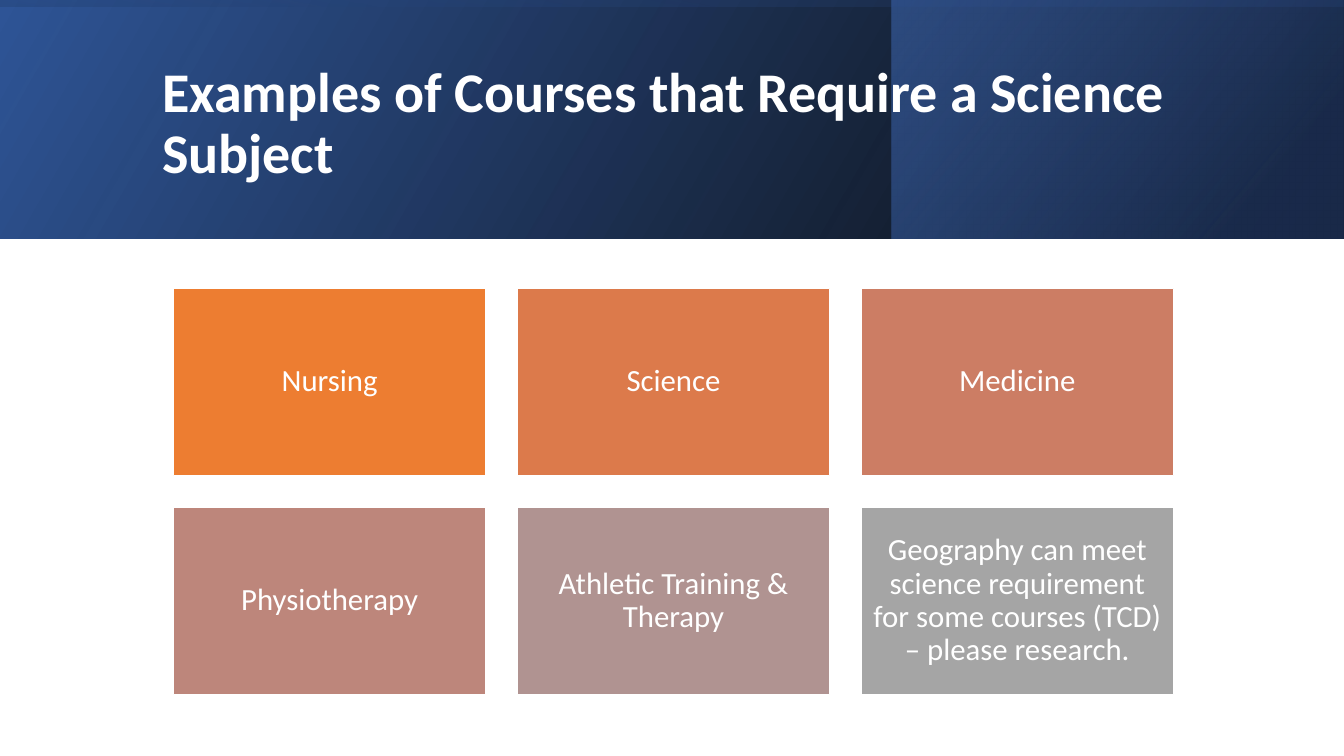
from lxml.etree import SubElement
from pptx import Presentation
from pptx.dml.color import RGBColor
from pptx.enum.shapes import MSO_SHAPE
from pptx.enum.text import MSO_ANCHOR as ANCHOR, PP_ALIGN as ALIGN
from pptx.oxml.ns import qn
from pptx.util import Inches, Pt


def color(hex_code):
    return RGBColor.from_string(hex_code)


class CourseSlide:
    FONT = "Calibri"
    WHITE = "FFFFFF"

    def __init__(self, slide):
        self.slide = slide

    def rect(self, left, top, width, height):
        shape = self.slide.shapes.add_shape(
            MSO_SHAPE.RECTANGLE, Inches(left), Inches(top), Inches(width), Inches(height))
        shape.shadow.inherit = False
        return shape

    def gradient_band(self, box, angle, stops, rotation=0):
        """Add a mirrored rectangle; stops are (position %, colour, opacity %)."""
        band = self.rect(*box)
        band.rotation = rotation
        band.line.fill.background()
        band.fill.gradient()
        properties = band.element.spPr
        properties.find(qn("a:xfrm")).set("flipH", "1")
        gradient = properties.find(qn("a:gradFill"))
        gradient.attrib.clear()
        for child in list(gradient):
            gradient.remove(child)
        stop_list = SubElement(gradient, qn("a:gsLst"))
        for position, hex_code, opacity in stops:
            stop = SubElement(stop_list, qn("a:gs"), pos=str(position * 1000))
            tint = SubElement(stop, qn("a:srgbClr"), val=hex_code)
            SubElement(tint, qn("a:alpha"), val=str(opacity * 1000))
        SubElement(gradient, qn("a:lin"), ang=str(angle * 60000), scaled="0")

    def set_text(self, frame, text, size, align, bold=False):
        frame.word_wrap = True
        frame.vertical_anchor = ANCHOR.MIDDLE
        paragraph = frame.paragraphs[0]
        paragraph.text = text
        paragraph.alignment = align
        paragraph.line_spacing = 0.9
        font = paragraph.font
        font.name, font.size, font.bold = self.FONT, Pt(size), bold
        font.color.rgb = color(self.WHITE)

    def title(self, text, left, top, width, height):
        heading = self.slide.shapes.add_textbox(
            Inches(left), Inches(top), Inches(width), Inches(height))
        self.set_text(heading.text_frame, text, 40, ALIGN.LEFT, bold=True)

    def tile(self, text, fill, left, top, width, height):
        tile = self.rect(left, top, width, height)
        tile.fill.solid()
        tile.fill.fore_color.rgb = color(fill)
        tile.line.color.rgb = color(self.WHITE)
        tile.line.width = Pt(1)
        frame = tile.text_frame
        frame.margin_left = frame.margin_right = Inches(0.09)
        frame.margin_top = frame.margin_bottom = Inches(0.09)
        self.set_text(frame, text, 22, ALIGN.CENTER)


COURSES = [
    ("Nursing", "ED7D31"),
    ("Science", "DC7A4B"),
    ("Medicine", "CC7D64"),
    ("Physiotherapy", "BD867B"),
    ("Athletic Training & Therapy", "B09391"),
    ("Geography can meet science requirement for some courses (TCD) – please research.",
     "A5A5A5"),
]
COLUMNS = 3
TILE_WIDTH, TILE_HEIGHT, GAP = 3.1, 1.86, 0.31
GRID_LEFT, GRID_TOP = 1.72, 2.86


def main():
    deck = Presentation()
    deck.slide_width, deck.slide_height = Inches(13.33), Inches(7.5)
    page = CourseSlide(deck.slides.add_slide(deck.slide_layouts[6]))

    page.gradient_band((0, 0, 13.33, 2.37), 330, [(0, "000000", 96), (100, "2F5597", 100)])
    page.gradient_band((8.84, 0, 4.48, 2.37), 320, [(19, "203864", 68), (100, "4472C4", 48)])
    page.gradient_band((5.48, -5.48, 2.37, 13.33), 350,
                       [(23, "2F5597", 16), (99, "000000", 45)], rotation=270)
    page.title("Examples of Courses that Require a Science Subject", 1.51, 0.38, 10.63, 1.72)

    for index, (course, fill) in enumerate(COURSES):
        row, column = divmod(index, COLUMNS)
        page.tile(course, fill,
                  GRID_LEFT + column * (TILE_WIDTH + GAP),
                  GRID_TOP + row * (TILE_HEIGHT + GAP),
                  TILE_WIDTH, TILE_HEIGHT)

    deck.save("out.pptx")


if __name__ == "__main__":
    main()
